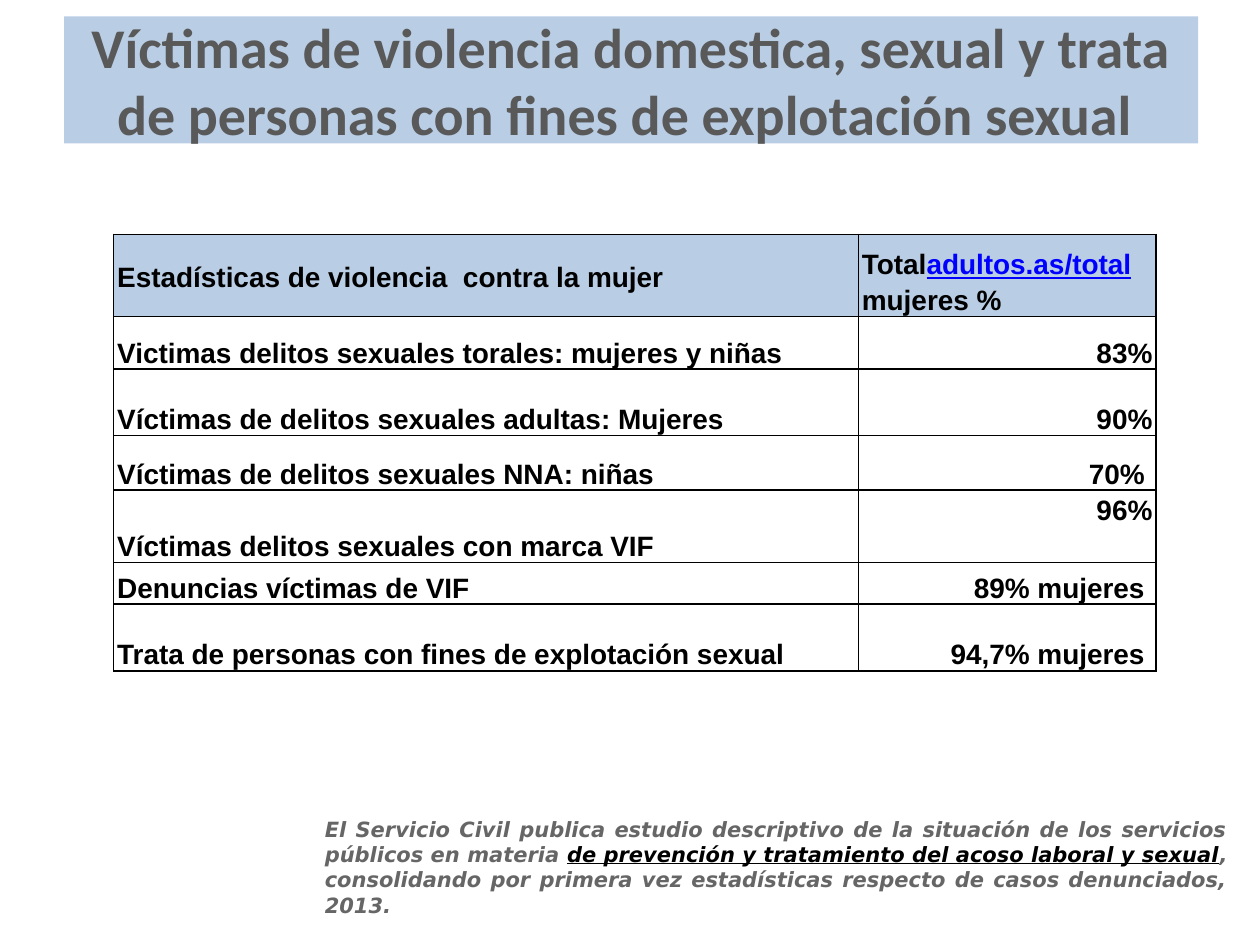
import pptx
import pptx.util
import pptx.dml.color
import pptx.enum.text
import pptx.oxml
import pptx.oxml.ns

Pt = pptx.util.Pt
RGBColor = pptx.dml.color.RGBColor
ALIGN = pptx.enum.text.PP_ALIGN
ANCHOR = pptx.enum.text.MSO_ANCHOR

PALE_BLUE = RGBColor(0xB9, 0xCD, 0xE5)
TITLE_GREY = RGBColor(0x59, 0x59, 0x59)
NOTE_GREY = RGBColor(0x66, 0x66, 0x66)
LINK_BLUE = RGBColor(0x00, 0x00, 0xFF)
BLACK = RGBColor(0x00, 0x00, 0x00)

TITLE_FONT = {"name": "Calibri", "size": Pt(32), "bold": True}
CELL_FONT = {"name": "Arial", "size": Pt(16), "bold": True}
NOTE_FONT = {"name": "DejaVu Sans", "size": Pt(12), "bold": True, "italic": True}

TITLE = ("Víctimas de violencia domestica, sexual y trata de personas "
         "con fines de explotación sexual ")
HEADINGS = [
    [("Estadísticas de violencia  contra la mujer", BLACK, False)],
    [("Total", BLACK, False), ("adultos.as/total", LINK_BLUE, True),
     (" mujeres %", BLACK, False)],
]
# Label, value, row height in points
STATISTICS = [
    ("Victimas delitos sexuales torales: mujeres y niñas", "83%", 30.2),
    ("Víctimas de delitos sexuales adultas: Mujeres", "90%", 38),
    ("Víctimas de delitos sexuales NNA: niñas", "70% ", 31),
    ("Víctimas delitos sexuales con marca VIF", "96%", 41.4),
    ("Denuncias víctimas de VIF", "89% mujeres ", 23.8),
    ("Trata de personas con fines de explotación sexual", "94,7% mujeres ", 38.2),
]
TOP_VALUE = "96%"
HEADING_HEIGHT = 46.8
COLUMN_SHARES = (5.91 / 8.27, 2.36 / 8.27)
NOTE = [
    ("El Servicio Civil publica estudio descriptivo de la situación de los "
     "servicios públicos en materia ", NOTE_GREY, False),
    ("de prevención y tratamiento del acoso laboral y sexual", BLACK, True),
    (", consolidando por primera vez estadísticas respecto de casos "
     "denunciados, 2013.", NOTE_GREY, False),
]


def apply_format(target, values):
    for key, value in values.items():
        setattr(target, key, value)


def write_spans(para, spans, font):
    """Add (text, colour, underline) spans to a paragraph."""
    for text, colour, underline in spans:
        span = para.add_run()
        span.text = text
        apply_format(span.font, {**font, "underline": underline})
        span.font.color.rgb = colour


def place(shape, box):
    apply_format(shape, dict(zip(("left", "top", "width", "height"), map(Pt, box))))


def fill_title(page, box):
    title = page.shapes.title
    place(title, box)
    title.fill.solid()
    title.fill.fore_color.rgb = PALE_BLUE
    apply_format(title.text_frame, {"word_wrap": True, "vertical_anchor": ANCHOR.MIDDLE,
                                    "auto_size": pptx.enum.text.MSO_AUTO_SIZE.NONE})
    para = title.text_frame.paragraphs[0]
    para.alignment = ALIGN.CENTER
    write_spans(para, [(TITLE, TITLE_GREY, False)], TITLE_FONT)


def add_borders(cell):
    properties = cell._tc.get_or_add_tcPr()
    for side in ("lnL", "lnR", "lnT", "lnB"):
        properties.append(pptx.oxml.parse_xml(
            f'<a:{side} {pptx.oxml.ns.nsdecls("a")} w="{Pt(1)}">'
            f'<a:solidFill><a:srgbClr val="{BLACK}"/></a:solidFill></a:{side}>'))


def fill_cell(cell, spans, alignment, anchor, fill=None):
    add_borders(cell)
    apply_format(cell, {"margin_left": Pt(2), "margin_right": Pt(2), "margin_top": Pt(0.6),
                        "margin_bottom": Pt(0), "vertical_anchor": anchor})
    if fill is None:
        cell.fill.background()
    else:
        cell.fill.solid()
        cell.fill.fore_color.rgb = fill
    para = cell.text_frame.paragraphs[0]
    apply_format(para, {"alignment": alignment, "line_spacing": 1.15})
    write_spans(para, spans, CELL_FONT)


def add_statistics(page, box):
    frame = page.shapes.add_table(len(STATISTICS) + 1, 2, *map(Pt, box))
    table = frame.table
    for column, share in zip(table.columns, COLUMN_SHARES):
        column.width = Pt(box[2] * share)
    heights = [HEADING_HEIGHT] + [height for _, _, height in STATISTICS]
    for row, height in zip(table.rows, heights):
        row.height = Pt(height)
    for index, anchor in enumerate((ANCHOR.MIDDLE, ANCHOR.BOTTOM)):
        fill_cell(table.cell(0, index), HEADINGS[index], ALIGN.LEFT, anchor, PALE_BLUE)
    for index, (label, value, _) in enumerate(STATISTICS, start=1):
        anchor = ANCHOR.TOP if value == TOP_VALUE else ANCHOR.BOTTOM
        fill_cell(table.cell(index, 0), [(label, BLACK, False)], ALIGN.LEFT, ANCHOR.BOTTOM)
        fill_cell(table.cell(index, 1), [(value, BLACK, False)], ALIGN.RIGHT, anchor)


def add_note(page, box):
    frame = page.shapes.add_textbox(*map(Pt, box)).text_frame
    apply_format(frame, {"word_wrap": True,
                         "auto_size": pptx.enum.text.MSO_AUTO_SIZE.SHAPE_TO_FIT_TEXT})
    para = frame.paragraphs[0]
    para.alignment = ALIGN.JUSTIFY
    write_spans(para, NOTE, NOTE_FONT)


def main():
    deck = pptx.Presentation()
    apply_format(deck, {"slide_width": Pt(720), "slide_height": Pt(540)})
    page = deck.slides.add_slide(deck.slide_layouts[5])
    fill_title(page, (36.7, 9.3, 648, 72.7))
    add_statistics(page, (65, 134, 595.5, 249.4))
    add_note(page, (178.5, 463, 530, 65.5))
    deck.save("out.pptx")


if __name__ == "__main__":
    main()
